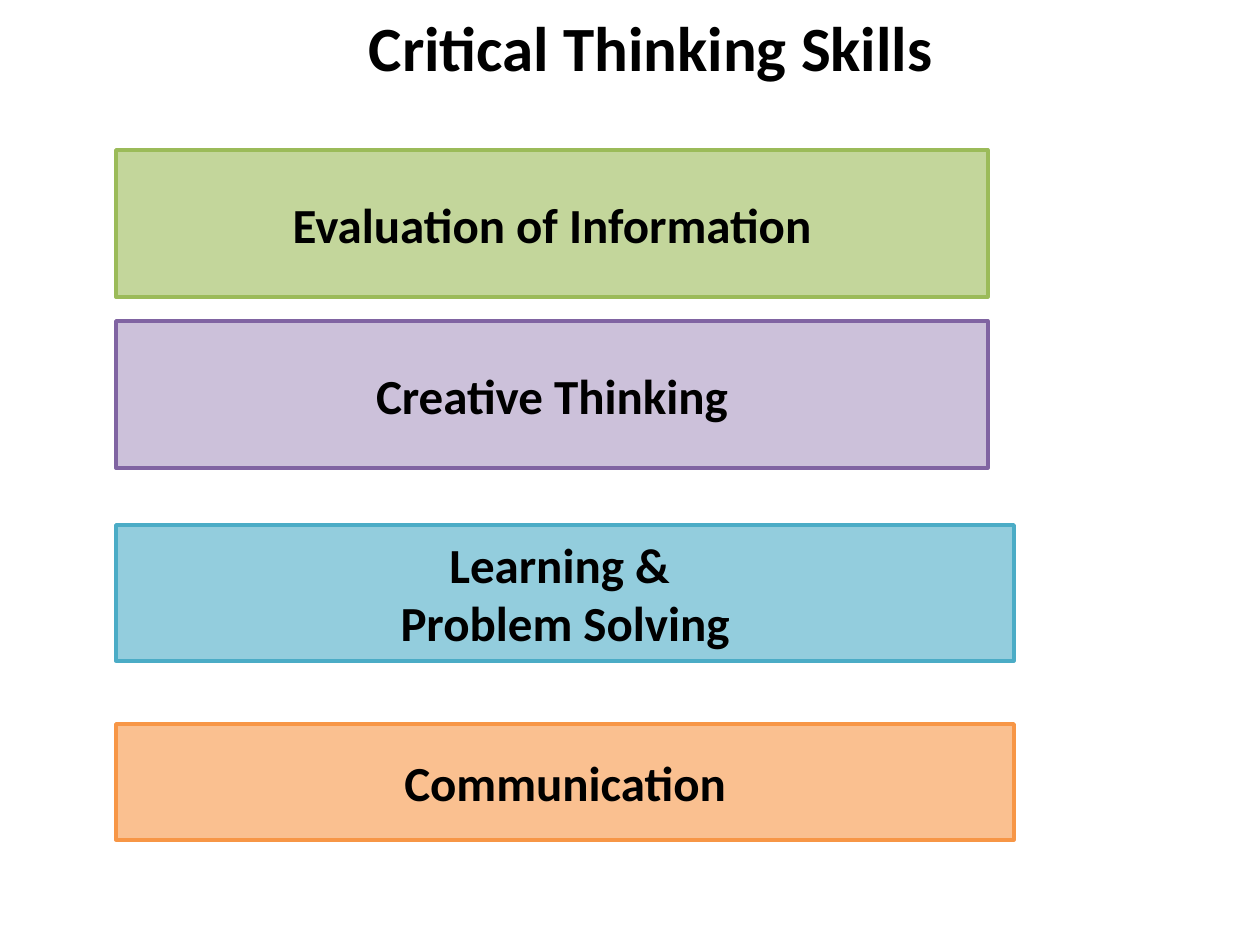
import dataclasses

import pptx
import pptx.dml.color
import pptx.enum.shapes
import pptx.enum.text
import pptx.util

PX = 914400 / 126  # EMU per pixel
FONT = "Calibri"
LEFT = 116
COLORS = {
    "text": "000000",
    "green": "C3D69B", "green_line": "9BBB59",
    "purple": "CCC1DA", "purple_line": "8064A2",
    "blue": "93CDDD", "blue_line": "4BACC6",
    "orange": "FAC090", "orange_line": "F79646",
}


@dataclasses.dataclass
class Skill:
    lines: list[str]
    color: str
    top: int
    width: int
    height: int


SKILLS = [
    Skill(["Evaluation of Information"], "green", 150, 872, 147),
    Skill(["Creative Thinking"], "purple", 321, 872, 147),
    Skill(["Learning & ", "Problem Solving"], "blue", 525, 898, 136),
    Skill(["Communication"], "orange", 724, 898, 116),
]


def px(n: int) -> pptx.util.Emu:
    return pptx.util.Emu(round(n * PX))


def rgb(name: str) -> pptx.dml.color.RGBColor:
    return pptx.dml.color.RGBColor.from_string(COLORS[name])


def set_text(sp, lines: list[str], size: int, wrap: bool) -> None:
    tf = sp.text_frame
    tf.word_wrap = wrap
    tf.vertical_anchor = pptx.enum.text.MSO_ANCHOR.MIDDLE
    tf.text = "\n".join(lines)
    for p in tf.paragraphs:
        p.alignment = pptx.enum.text.PP_ALIGN.CENTER
        p.font.name = FONT
        p.font.size = pptx.util.Pt(size)
        p.font.bold = True
        p.font.color.rgb = rgb("text")


def draw_skill(s, skill: Skill) -> None:
    sp = s.shapes.add_shape(
        pptx.enum.shapes.MSO_SHAPE.RECTANGLE,
        px(LEFT), px(skill.top), px(skill.width), px(skill.height))
    sp.shadow.inherit = False
    sp.fill.solid()
    sp.fill.fore_color.rgb = rgb(skill.color)
    sp.line.color.rgb = rgb(skill.color + "_line")
    sp.line.width = pptx.util.Pt(2)
    set_text(sp, skill.lines, 28, wrap=False)


def main() -> None:
    prs = pptx.Presentation()
    prs.slide_width, prs.slide_height = px(1260), px(945)
    s = prs.slides.add_slide(prs.slide_layouts[6])

    # Title
    title = s.shapes.add_textbox(px(84), px(4), px(1134), px(84))
    set_text(title, ["Critical Thinking Skills"], 36, wrap=True)

    # Skill bars
    for skill in SKILLS:
        draw_skill(s, skill)

    prs.save("out.pptx")


if __name__ == "__main__":
    main()
